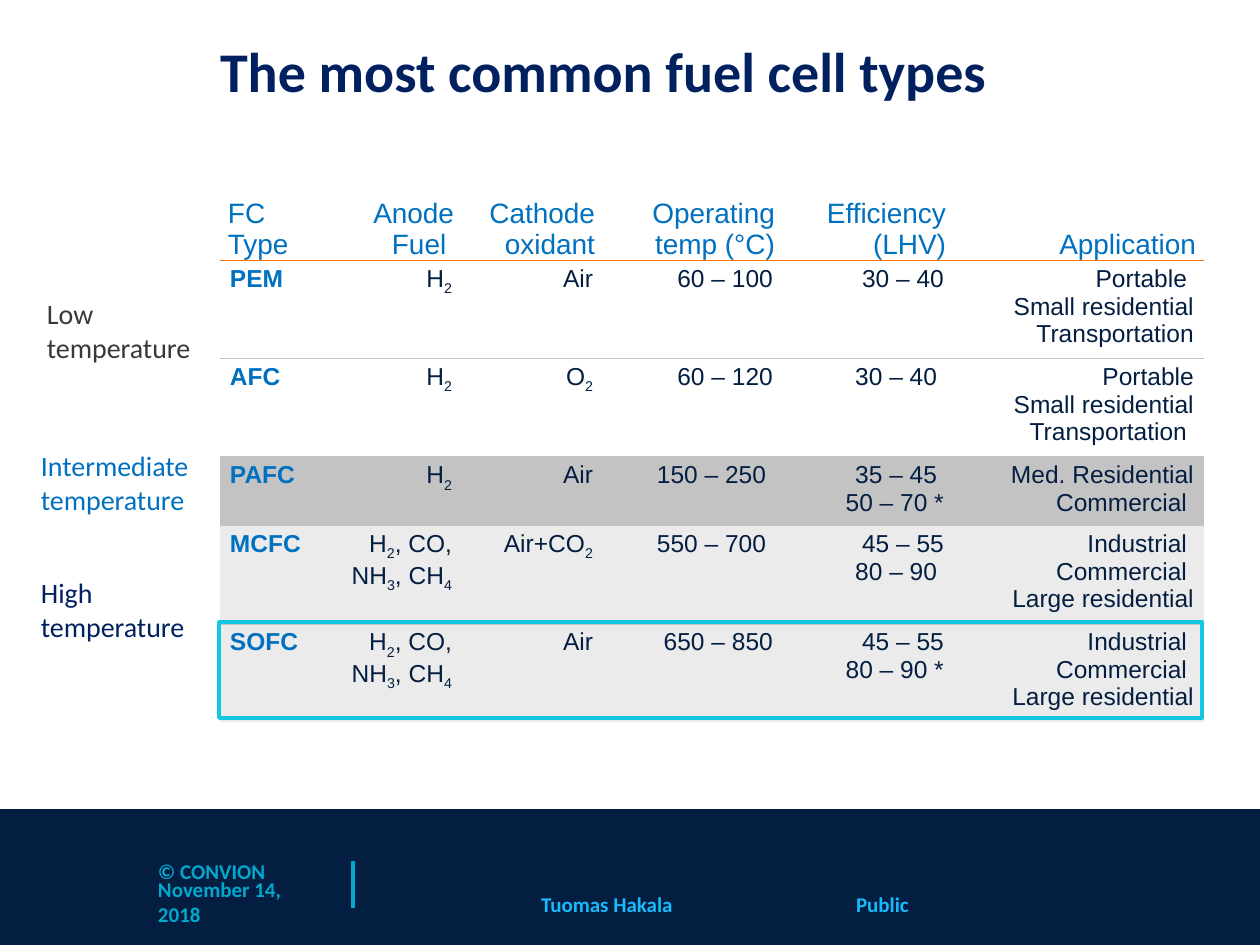
from dataclasses import dataclass
from itertools import groupby
from lxml.etree import SubElement
from pptx import Presentation
from pptx.dml.color import RGBColor
from pptx.enum.shapes import MSO_CONNECTOR, MSO_SHAPE
from pptx.enum.text import MSO_ANCHOR, MSO_AUTO_SIZE, PP_ALIGN
from pptx.oxml.ns import qn
from pptx.util import Pt

SCALE = 914400 / 126  # EMU in one px


@dataclass(frozen=True)
class Theme:
    navy: str = "041E41"
    title: str = "002060"
    blue: str = "0070C0"
    teal: str = "00A9CD"
    sky: str = "17BBFD"
    cyan: str = "13C7E2"
    dark: str = "383838"
    orange: str = "FF7300"
    grey: str = "C3C3C3"
    pale: str = "EBEBEB"
    sans: str = "Calibri"
    grid: str = "Arial"
    huge: int = 32
    large: int = 16
    body: int = 14
    small: int = 12


T = Theme()
NO_STYLE = "{2D5ABB26-0587-4C30-8999-92F81FD0307C}"
COLS = [120, 122, 141, 180, 171, 250]
HEADS = ["FC Type", "Anode Fuel ", "Cathode oxidant", "Operating temp (°C)",
         "Efficiency (LHV)", "Application"]
# Row height, fill, cell texts
ROWS = [
    (98, None, ["PEM", "H2", "Air", "60 – 100", "30 – 40",
                "Portable \nSmall residential\nTransportation"]),
    (98, None, ["AFC", "H2", "O2", "60 – 120", "30 – 40 ",
                "Portable\nSmall residential\nTransportation "]),
    (68, T.grey, ["PAFC", "H2", "Air", "150 – 250 ", "35 – 45 \n50 – 70 *",
                  "Med. Residential\nCommercial "]),
    (98, T.pale, ["MCFC", "H2, CO, NH3, CH4", "Air+CO2", "550 – 700 ",
                  "45 – 55\n80 – 90 ",
                  "Industrial \nCommercial \nLarge residential"]),
    (98, T.pale, ["SOFC", "H2, CO, NH3, CH4", "Air", "650 – 850",
                  "45 – 55\n80 – 90 *",
                  "Industrial \nCommercial \nLarge residential"]),
]
# Left, top, text, colour
GROUPS = [
    (34, 291, "Low\ntemperature", T.dark),
    (28, 443, "Intermediate\ntemperature", T.blue),
    (28, 570, "High\ntemperature", T.title),
]


def px(*nums):
    return [round(n * SCALE) for n in nums]


def rgb(code):
    return RGBColor.from_string(code)


def inset(host, pad, anchor):
    """Set the margins and anchor of a text frame or a table cell."""
    (host.margin_left, host.margin_top,
     host.margin_right, host.margin_bottom) = px(*pad)
    host.vertical_anchor = anchor


def write(frame, text, size=T.large, color=T.navy, font=T.sans, bold=False,
          align=PP_ALIGN.LEFT, subs=False, tab=None):
    """Fill a frame; each line is a paragraph, subs lowers the digits."""
    for i, line in enumerate(text.split("\n")):
        para = frame.add_paragraph() if i else frame.paragraphs[0]
        para.alignment = align
        if tab:
            stops = SubElement(para._p.get_or_add_pPr(), qn("a:tabLst"))
            SubElement(stops, qn("a:tab"), pos=str(px(tab)[0]), algn="l")
        for low, part in groupby(line, lambda c: subs and c.isdigit()):
            run = para.add_run()
            run.text = "".join(part)
            run.font.size, run.font.bold = Pt(size), bold
            run.font.name, run.font.color.rgb = font, rgb(color)
            if low:
                run.font._element.set("baseline", "-25000")


def label(slide, box, text, pad=(13, 6, 11, 6), anchor=MSO_ANCHOR.TOP, **fmt):
    frame = slide.shapes.add_textbox(*px(*box)).text_frame
    frame.word_wrap = True
    inset(frame, pad, anchor)
    write(frame, text, **fmt)


def rect(slide, box, line, width, fill=None):
    shape = slide.shapes.add_shape(MSO_SHAPE.RECTANGLE, *px(*box))
    shape.shadow.inherit = False
    shape.line.color.rgb, shape.line.width = rgb(line), Pt(width)
    if fill:
        shape.fill.solid()
        shape.fill.fore_color.rgb = rgb(fill)
    else:
        shape.fill.background()


def rule(slide, ends, color, width):
    line = slide.shapes.add_connector(MSO_CONNECTOR.STRAIGHT, *px(*ends))
    line.line.color.rgb, line.line.width = rgb(color), Pt(width)
    SubElement(line._element.spPr, qn("a:effectLst"))


def edge(cell, side, color, width):
    line = SubElement(cell._tc.get_or_add_tcPr(), qn("a:" + side),
                      w=str(Pt(width)))
    fill = SubElement(line, qn("a:solidFill"))
    SubElement(fill, qn("a:srgbClr"), val=color)


def paint(cell, fill):
    if fill:
        cell.fill.solid()
        cell.fill.fore_color.rgb = rgb(fill)
    else:
        cell.fill.background()


def grid(slide, left, top):
    rows = [(66, None, HEADS)] + ROWS
    high = sum(row[0] for row in rows)
    table = slide.shapes.add_table(
        len(rows), len(COLS), *px(left, top, sum(COLS), high)).table
    table.first_row = table.horz_banding = False
    table._tbl.tblPr.find(qn("a:tableStyleId")).text = NO_STYLE
    for col, wide in zip(table.columns, COLS):
        col.width = px(wide)[0]
    # Lines between rows: orange under the heads, then grey
    lines = [(T.orange, 0.5)] + [(T.grey, 0.25)] * (len(rows) - 2)
    for r, (tall, fill, texts) in enumerate(rows):
        table.rows[r].height = px(tall)[0]
        head = r == 0
        for c, text in enumerate(texts):
            cell = table.cell(r, c)
            inset(cell, (8, 0, 8, 0) if head else (10, 5, 10, 5),
                  MSO_ANCHOR.BOTTOM if head else MSO_ANCHOR.TOP)
            write(cell.text_frame, text, font=T.grid,
                  size=T.large if head else T.body,
                  color=T.blue if head or c == 0 else T.navy,
                  bold=c == 0 and not head, subs=c in (1, 2),
                  align=PP_ALIGN.RIGHT if c else PP_ALIGN.LEFT)
            if r:
                edge(cell, "lnT", *lines[r - 1])
            if r < len(lines):
                edge(cell, "lnB", *lines[r])
            paint(cell, fill)


def title(slide, box, text):
    shape = slide.shapes.title
    shape.left, shape.top, shape.width, shape.height = px(*box)
    frame = shape.text_frame
    frame.word_wrap, frame.auto_size = True, MSO_AUTO_SIZE.SHAPE_TO_FIT_TEXT
    inset(frame, (0, 6, 11, 6), MSO_ANCHOR.TOP)
    write(frame, text, size=T.huge, color=T.title, bold=True)


def footer(slide):
    rect(slide, (0, 810, 1260, 135), T.navy, 0.75, fill=T.navy)
    rule(slide, (353, 908, 353, 861), T.teal, 2)
    fmt = dict(size=T.small, bold=True)
    side = dict(pad=(0, 6, 13, 6), anchor=MSO_ANCHOR.MIDDLE, color=T.teal)
    label(slide, (158, 846, 194, 50), "© CONVION", **side, **fmt)
    label(slide, (158, 885, 159, 33), "November 14, 2018", **side, **fmt)
    label(slide, (528, 886, 562, 50), "Tuomas Hakala\tPublic",
          color=T.sky, tab=315, **fmt)


def main():
    deck = Presentation()
    deck.slide_width, deck.slide_height = px(1260, 945)
    slide = deck.slides.add_slide(deck.slide_layouts[5])
    title(slide, (220, 30, 968, 79), "The most common fuel cell types")
    footer(slide)
    grid(slide, 220, 193)
    # Temperature groups beside the table
    for left, top, text, color in GROUPS:
        label(slide, (left, top, 185, 81), text, color=color)
    # Frame round the SOFC row
    rect(slide, (219, 622, 983, 96), T.cyan, 2)
    deck.save("out.pptx")


if __name__ == "__main__":
    main()
